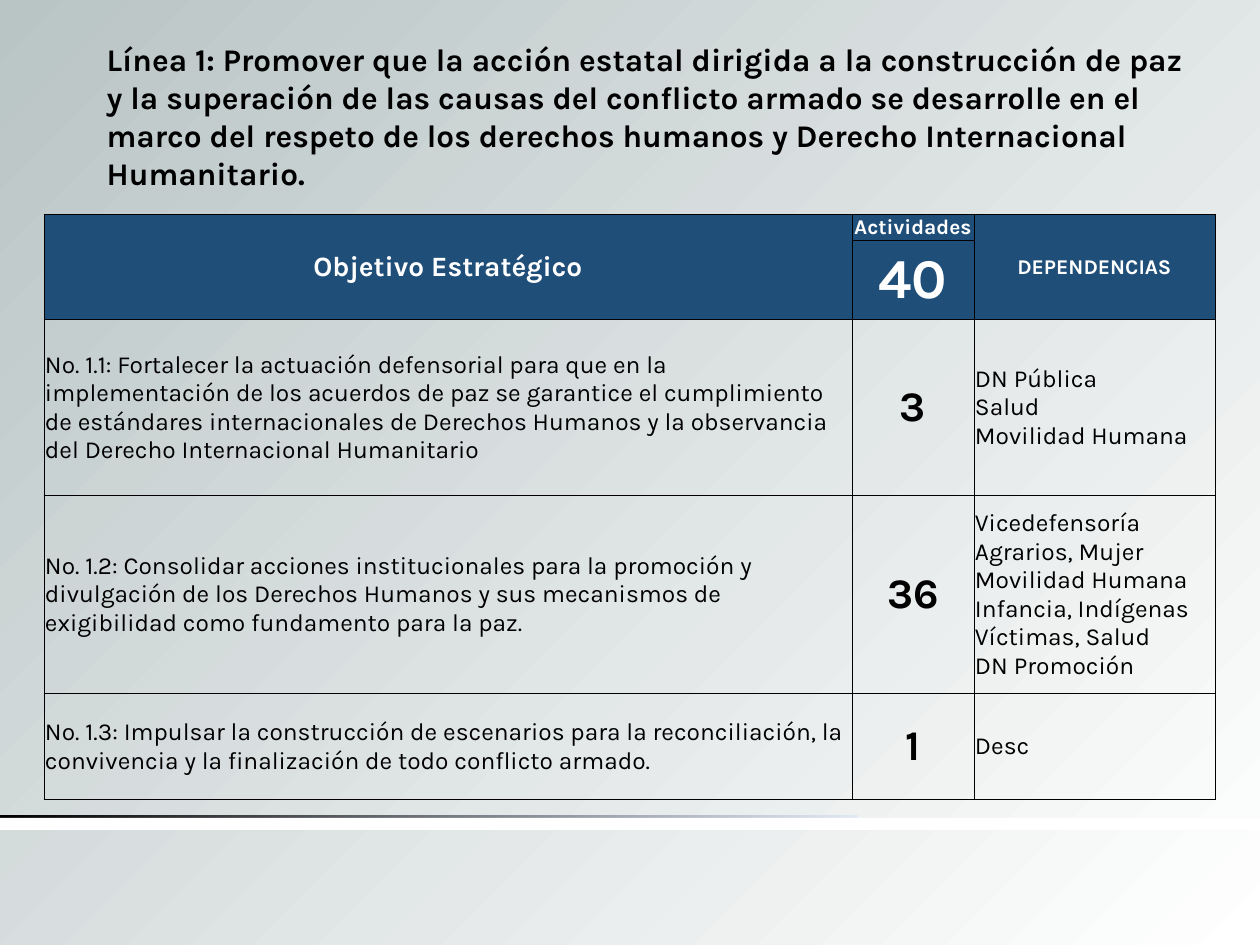
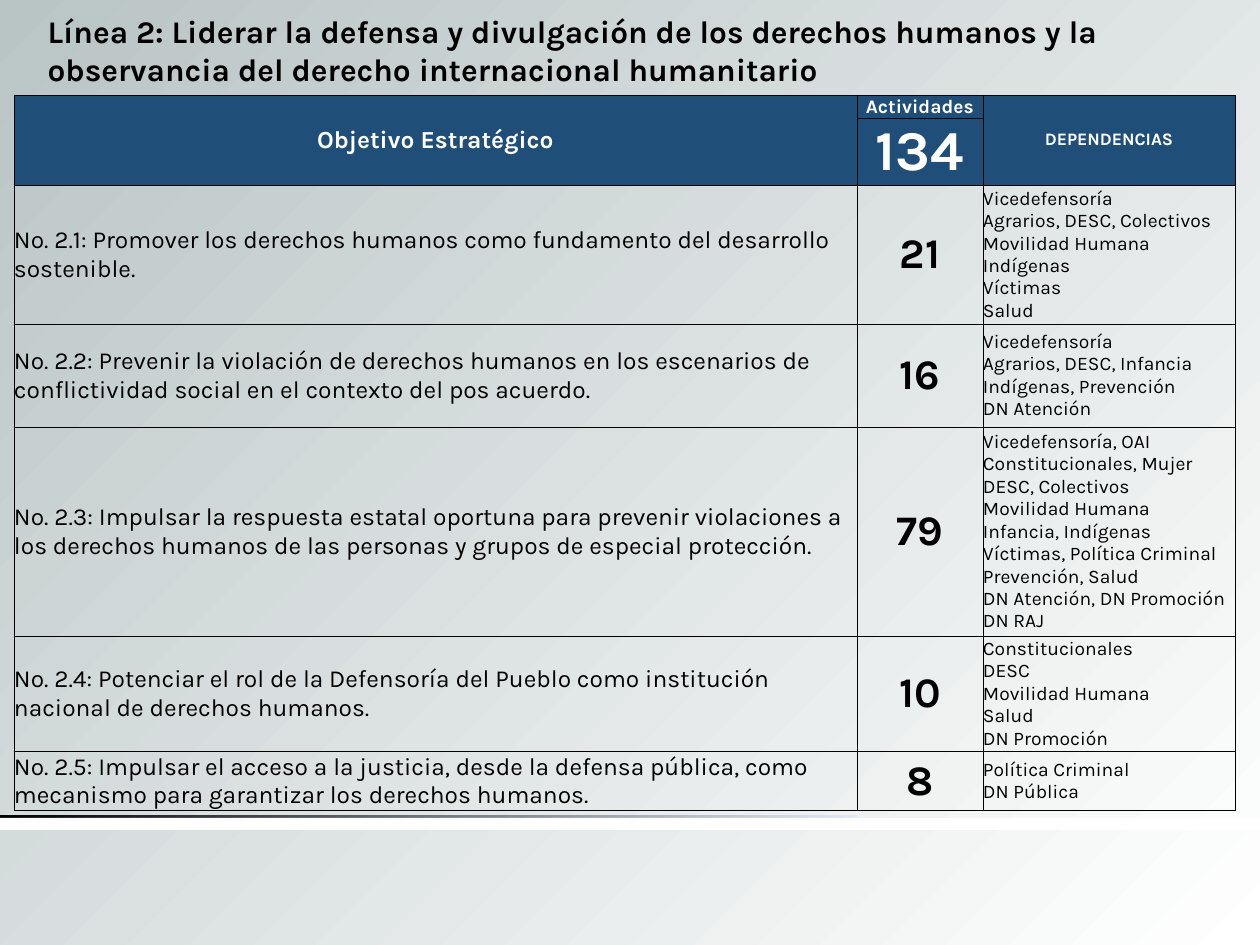
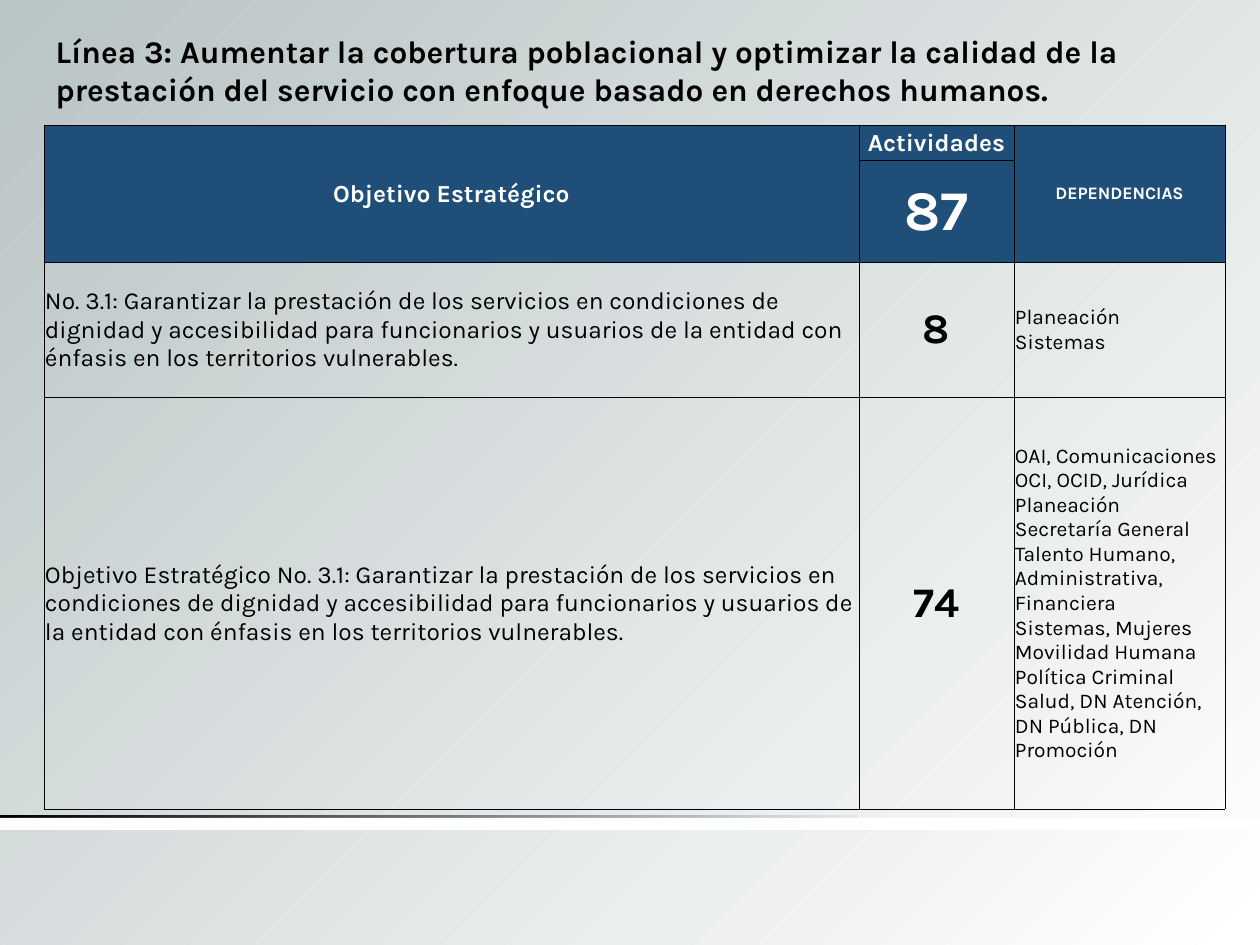
"""Build three slides of strategic objectives, each a title over a table."""
from pptx import Presentation
from pptx.dml.color import RGBColor
from pptx.enum.shapes import MSO_SHAPE
from pptx.enum.text import MSO_ANCHOR, MSO_AUTO_SIZE, PP_ALIGN
from pptx.oxml import parse_xml
from pptx.oxml.ns import nsdecls, qn
from pptx.util import Emu, Pt

FONT = "Karla"
BLACK, WHITE, NAVY = "000000", "FFFFFF", "1F4E78"
GRAY, PALE_BLUE = "B9C4C5", "E1E8F5"
HEADER_ROWS = 2
TOTAL_SIZE, COUNT_SIZE, OBJECTIVE_SIZE, TITLE_SIZE = 32, 24, 14, 18


def px(length):
    return Emu(round(length * 914400 / 126))


def color(value):
    return RGBColor.from_string(value)


LINES = [
    {
        "title": "Línea 1: Promover que la acción estatal dirigida a la construcción de paz y la superación de las causas del conflicto armado se desarrolle en el marco del respeto de los derechos humanos y Derecho Internacional Humanitario.",
        "title_at": (94, 34, 1121, 165),
        "table_at": (44, 214),
        "columns": (808, 122, 241),
        "rows": (26, 79, 176, 198, 106),
        "margin": 1,
        "header_sizes": (16, 12, 12),
        "units_size": 14,
        "total": "40",
        "objectives": [
            ("No. 1.1: Fortalecer la actuación defensorial para que en la implementación de los acuerdos de paz se garantice el cumplimiento de estándares internacionales de Derechos Humanos y la observancia del Derecho Internacional Humanitario",
             "3", "DN Pública\nSalud\nMovilidad Humana"),
            ("No. 1.2: Consolidar acciones institucionales para la promoción y divulgación de los Derechos Humanos y sus mecanismos de exigibilidad como fundamento para la paz.",
             "36", "Vicedefensoría\nAgrarios, Mujer\nMovilidad Humana\nInfancia, Indígenas\nVíctimas, Salud\nDN Promoción"),
            ("No. 1.3: Impulsar la construcción de escenarios para la reconciliación, la convivencia y la finalización de todo conflicto armado.",
             "1", "Desc"),
        ],
    },
    {
        "title": "Línea 2: Liderar la defensa y divulgación de los derechos humanos y la observancia del derecho internacional humanitario",
        "title_at": (35, 6, 1191, 90),
        "table_at": (14, 95),
        "columns": (843, 126, 252),
        "rows": (23, 66, 136, 103, 209, 113, 57),
        "margin": 0,
        "header_sizes": (14, 11, 10),
        "units_size": 11,
        "total": "134",
        "objectives": [
            ("No. 2.1: Promover los derechos humanos como fundamento del desarrollo sostenible.",
             "21", "Vicedefensoría\nAgrarios, DESC, Colectivos\nMovilidad Humana\nIndígenas\nVíctimas\nSalud"),
            ("No. 2.2: Prevenir la violación de derechos humanos en los escenarios de conflictividad social en el contexto del pos acuerdo.",
             "16", "Vicedefensoría\nAgrarios, DESC, Infancia\nIndígenas, Prevención\nDN Atención"),
            ("No. 2.3: Impulsar la respuesta estatal oportuna para prevenir violaciones a los derechos humanos de las personas y grupos de especial protección.",
             "79", "Vicedefensoría, OAI\nConstitucionales, Mujer\nDESC, Colectivos\nMovilidad Humana\nInfancia, Indígenas\nVíctimas, Política Criminal\nPrevención, Salud\nDN Atención, DN Promoción\nDN RAJ"),
            ("No. 2.4: Potenciar el rol de la Defensoría del Pueblo como institución nacional de derechos humanos.",
             "10", "Constitucionales\nDESC\nMovilidad Humana\nSalud\nDN Promoción"),
            ("No. 2.5: Impulsar el acceso a la justicia, desde la defensa pública, como mecanismo para garantizar los derechos humanos.",
             "8", "Política Criminal\nDN Pública"),
        ],
    },
    {
        "title": "Línea 3: Aumentar la cobertura poblacional y optimizar la calidad de la prestación del servicio con enfoque basado en derechos humanos.",
        "title_at": (43, 26, 1181, 90),
        "table_at": (44, 125),
        "columns": (815, 155, 211),
        "rows": (35, 102, 135, 412),
        "margin": 1,
        "header_sizes": (14, 14, 10),
        "units_size": 12,
        "total": "87",
        "objectives": [
            ("No. 3.1: Garantizar la prestación de los servicios en condiciones de dignidad y accesibilidad para funcionarios y usuarios de la entidad con énfasis en los territorios vulnerables.",
             "8", "Planeación\nSistemas"),
            ("Objetivo Estratégico No. 3.1: Garantizar la prestación de los servicios en condiciones de dignidad y accesibilidad para funcionarios y usuarios de la entidad con énfasis en los territorios vulnerables.",
             "74", "OAI, Comunicaciones\nOCI, OCID, Jurídica\nPlaneación\nSecretaría General\nTalento Humano, Administrativa, Financiera\nSistemas, Mujeres\nMovilidad Humana\nPolítica Criminal\nSalud, DN Atención,\nDN Pública, DN Promoción"),
        ],
    },
]

deck = Presentation()
deck.slide_width, deck.slide_height = px(1260), px(945)
master = deck.slide_master
title_only = deck.slide_layouts[5]

backdrop = master.background.fill
backdrop.gradient()
for stop, shade in zip(backdrop.gradient_stops, (WHITE, GRAY)):
    stop.color.rgb = color(shade)
linear = master.element.find(".//" + qn("a:lin"))
linear.getparent().replace(linear, parse_xml(
    f'<a:path {nsdecls("a")} path="circle"><a:fillToRect l="100000" t="100000"/></a:path>'))

for line in LINES:
    page = deck.slides.add_slide(title_only)
    title = page.shapes.title
    title.left, title.top, title.width, title.height = map(px, line["title_at"])
    frame = title.text_frame
    frame.text = line["title"]
    frame.word_wrap = True
    frame.auto_size = MSO_AUTO_SIZE.SHAPE_TO_FIT_TEXT
    frame.vertical_anchor = MSO_ANCHOR.TOP
    frame.paragraphs[0].alignment = PP_ALIGN.LEFT
    font = frame.paragraphs[0].runs[0].font
    font.name, font.size, font.bold = FONT, Pt(TITLE_SIZE), True
    font.color.rgb = color(BLACK)

    columns, rows = line["columns"], line["rows"]
    left, top = line["table_at"]
    table = page.shapes.add_table(len(rows), len(columns), px(left), px(top),
                                  px(sum(columns)), px(sum(rows))).table
    table.first_row = table.horz_banding = False
    for column, width in zip(table.columns, columns):
        column.width = px(width)
    for row, height in zip(table.rows, rows):
        row.height = px(height)

    contents = [("Objetivo Estratégico", "Actividades", "DEPENDENCIAS"),
                ("", line["total"], "")] + line["objectives"]
    header_sizes = line["header_sizes"]
    total_sizes = (header_sizes[0], TOTAL_SIZE, header_sizes[2])
    body_sizes = (OBJECTIVE_SIZE, COUNT_SIZE, line["units_size"])
    for row_index, texts in enumerate(contents):
        in_header = row_index < HEADER_ROWS
        sizes = (header_sizes, total_sizes)[row_index] if in_header else body_sizes
        for column_index, (text, size) in enumerate(zip(texts, sizes)):
            emphasized = in_header or column_index == 1
            cell = table.cell(row_index, column_index)
            cell.margin_left = cell.margin_right = cell.margin_top = px(line["margin"])
            cell.margin_bottom = 0
            cell.vertical_anchor = MSO_ANCHOR.MIDDLE
            for side in ("lnL", "lnR", "lnT", "lnB"):
                cell._tc.get_or_add_tcPr().append(parse_xml(
                    f'<a:{side} {nsdecls("a")} w="{Pt(0.5)}"><a:solidFill>'
                    f'<a:srgbClr val="{BLACK}"/></a:solidFill></a:{side}>'))
            if in_header:
                cell.fill.solid()
                cell.fill.fore_color.rgb = color(NAVY)
            else:
                cell.fill.background()
            cell.text_frame.text = text
            for paragraph in cell.text_frame.paragraphs:
                paragraph.alignment = PP_ALIGN.CENTER if emphasized else PP_ALIGN.LEFT
                paragraph.font.size = Pt(size)
                for span in paragraph.runs:
                    span.font.name, span.font.size = FONT, Pt(size)
                    span.font.bold = emphasized
                    span.font.color.rgb = color(WHITE if in_header else BLACK)
    for column_index in (0, 2):
        table.cell(0, column_index).merge(table.cell(1, column_index))

BANDS = [((0, 815, 858, 6), (BLACK, PALE_BLUE)), ((0, 818, 1260, 12), (WHITE,))]
for number, (place, shades) in enumerate(BANDS):
    band = page.shapes.add_shape(MSO_SHAPE.RECTANGLE, *map(px, place))
    band.shadow.inherit = False
    band.line.fill.background()
    if len(shades) == 1:
        band.fill.solid()
        band.fill.fore_color.rgb = color(shades[0])
    else:
        band.fill.gradient()
        band.fill.gradient_angle = 0
        for stop, shade in zip(band.fill.gradient_stops, shades):
            stop.color.rgb = color(shade)
    band.element.nvSpPr.cNvPr.id = 20 + number
    master.shapes.element.append(band.element)

deck.save("out.pptx")
